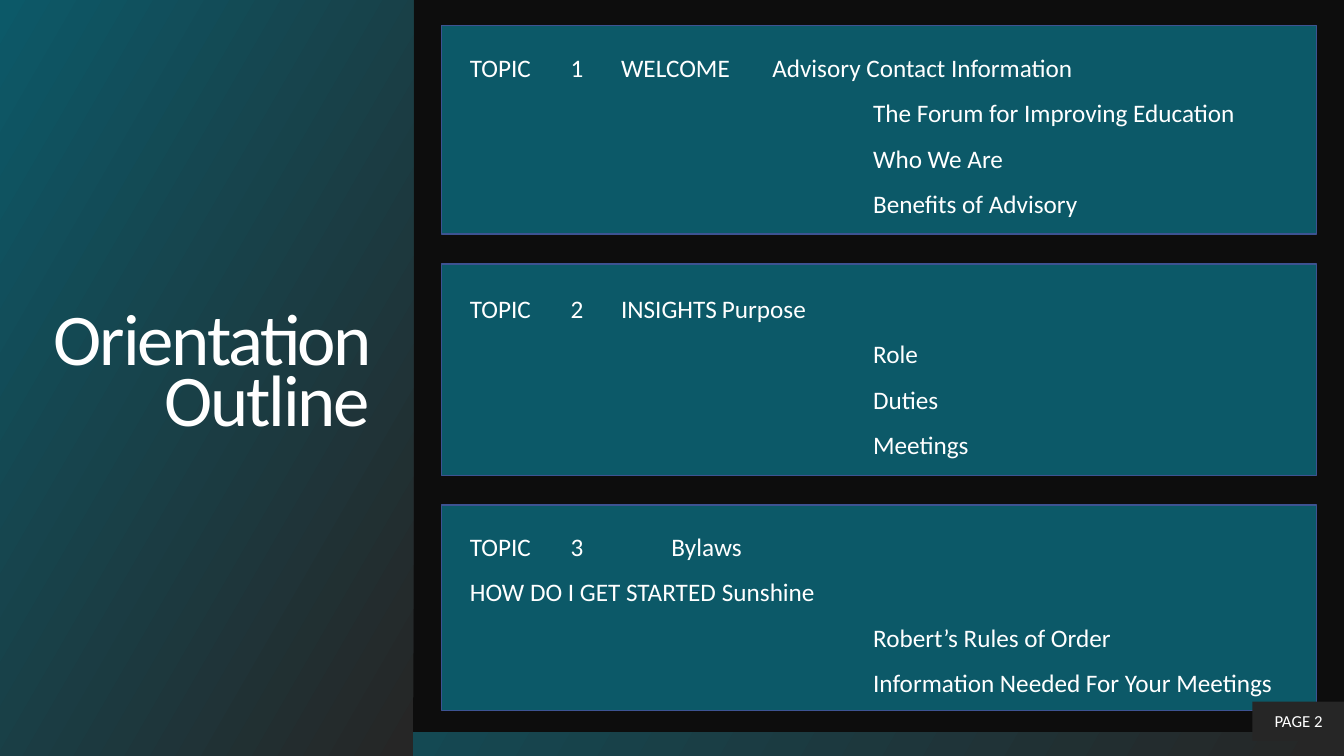
from dataclasses import dataclass
from lxml.etree import SubElement
from pptx import Presentation
from pptx.dml.color import RGBColor
from pptx.enum.shapes import MSO_SHAPE
from pptx.enum.text import MSO_ANCHOR, MSO_AUTO_SIZE, PP_ALIGN
from pptx.oxml.ns import qn
from pptx.util import Inches, Pt

TITLE = "Orientation Outline"
PAGE = "PAGE 2"
TOPICS = [
    {"top": 0.25, "high": 2.07, "inset": 0.12, "rows": [
        ("TOPIC\t1\tWELCOME", "Advisory Contact Information"),
        ("", "The Forum for Improving Education"),
        ("", "Who We Are"),
        ("", "Benefits of Advisory")]},
    {"top": 2.62, "high": 2.1, "inset": 0.14, "rows": [
        ("TOPIC\t2\tINSIGHTS", "Purpose"),
        ("", "Role"),
        ("", "Duties"),
        ("", "Meetings")]},
    {"top": 5.01, "high": 2.04, "inset": 0.11, "rows": [
        ("TOPIC\t3\t", "Bylaws"),
        ("HOW DO I GET STARTED", "Sunshine"),
        ("", "Robert’s Rules of Order"),
        ("", "Information Needed For Your Meetings")]},
]
STOPS = (0.72, 1.13, 4)


@dataclass(frozen=True)
class Theme:
    font: str = "Calibri"
    back: str = "0D0D0D"
    dark: str = "262626"
    teal: str = "0C5968"
    edge: str = "3D5392"
    ink: str = "FFFFFF"
    head: float = 52
    body: float = 18
    small: float = 12


theme = Theme()


def color(code):
    return RGBColor.from_string(code)


def paint(fill, code):
    fill.solid()
    fill.fore_color.rgb = color(code)


def blend(fill):
    fill.gradient()
    fill.gradient_angle = 150
    for stop, spot, code in zip(fill.gradient_stops, (0.01, 1), (theme.dark, theme.teal)):
        stop.position = spot
        stop.color.rgb = color(code)


def place(shape, left, top, wide, high):
    shape.left, shape.top = Inches(left), Inches(top)
    shape.width, shape.height = Inches(wide), Inches(high)


def block(slide, left, top, wide, high):
    shape = slide.shapes.add_shape(
        MSO_SHAPE.RECTANGLE, Inches(left), Inches(top), Inches(wide), Inches(high))
    shape.shadow.inherit = False
    shape.line.fill.background()
    return shape


def frame(shape, anchor, left, top, right):
    area = shape.text_frame
    area.word_wrap = True
    area.auto_size = MSO_AUTO_SIZE.NONE
    area.vertical_anchor = anchor
    area.margin_left, area.margin_right = Inches(left), Inches(right)
    area.margin_top = area.margin_bottom = Inches(top)
    return area


def write(para, text, size, align):
    para.alignment = align
    run = para.add_run()
    run.text = text
    run.font.name = theme.font
    run.font.size = Pt(size)
    run.font.bold = False
    run.font.color.rgb = color(theme.ink)
    return run


def indent(para, left):
    props = para._p.get_or_add_pPr()
    props.set("marL", str(Inches(left)))
    props.set("indent", "0")
    SubElement(props, qn("a:buNone"))
    tabs = SubElement(props, qn("a:tabLst"))
    for stop in STOPS:
        SubElement(tabs, qn("a:tab"), pos=str(Inches(stop)), algn="l")


def panel(slide):
    title = slide.shapes.title
    place(title, 0, 0, 4.1, 7.5)
    blend(title.fill)
    area = frame(title, MSO_ANCHOR.MIDDLE, 0.43, 0, 0.43)
    para = area.paragraphs[0]
    para.line_spacing = 0.7
    run = write(para, TITLE, theme.head, PP_ALIGN.RIGHT)
    run.font._element.set("spc", "-150")
    strip = block(slide, 0, 7.27, 13.33, 0.23)
    blend(strip.fill)
    title.element.addprevious(strip.element)


def card(shape, topic):
    place(shape, 4.38, topic["top"], 8.68, topic["high"])
    paint(shape.fill, theme.teal)
    shape.line.color.rgb = color(theme.edge)
    shape.line.width = Pt(1)
    area = frame(shape, MSO_ANCHOR.TOP, 0.28, topic["inset"], 0.1)
    for num, (lead, item) in enumerate(topic["rows"]):
        para = area.add_paragraph() if num else area.paragraphs[0]
        indent(para, 0 if lead else STOPS[-1])
        para.line_spacing = 1.5
        para.space_before = Pt(0)
        text = f"{lead}\t{item}" if lead else item
        write(para, text, theme.body, PP_ALIGN.LEFT)


def badge(slide):
    shape = block(slide, 12.42, 6.96, 0.92, 0.39)
    paint(shape.fill, theme.dark)
    area = frame(shape, MSO_ANCHOR.MIDDLE, 0.1, 0.05, 0.1)
    write(area.paragraphs[0], PAGE, theme.small, PP_ALIGN.CENTER)


def main():
    deck = Presentation()
    deck.slide_width, deck.slide_height = Inches(13.33), Inches(7.5)
    slide = deck.slides.add_slide(deck.slide_layouts.get_by_name("Comparison"))
    paint(slide.background.fill, theme.back)
    panel(slide)
    first, *bodies = slide.placeholders
    for shape, topic in zip(bodies, TOPICS):
        card(shape, topic)
    for spare in bodies[len(TOPICS):]:
        spare.element.getparent().remove(spare.element)
    badge(slide)
    deck.save("out.pptx")


if __name__ == "__main__":
    main()
